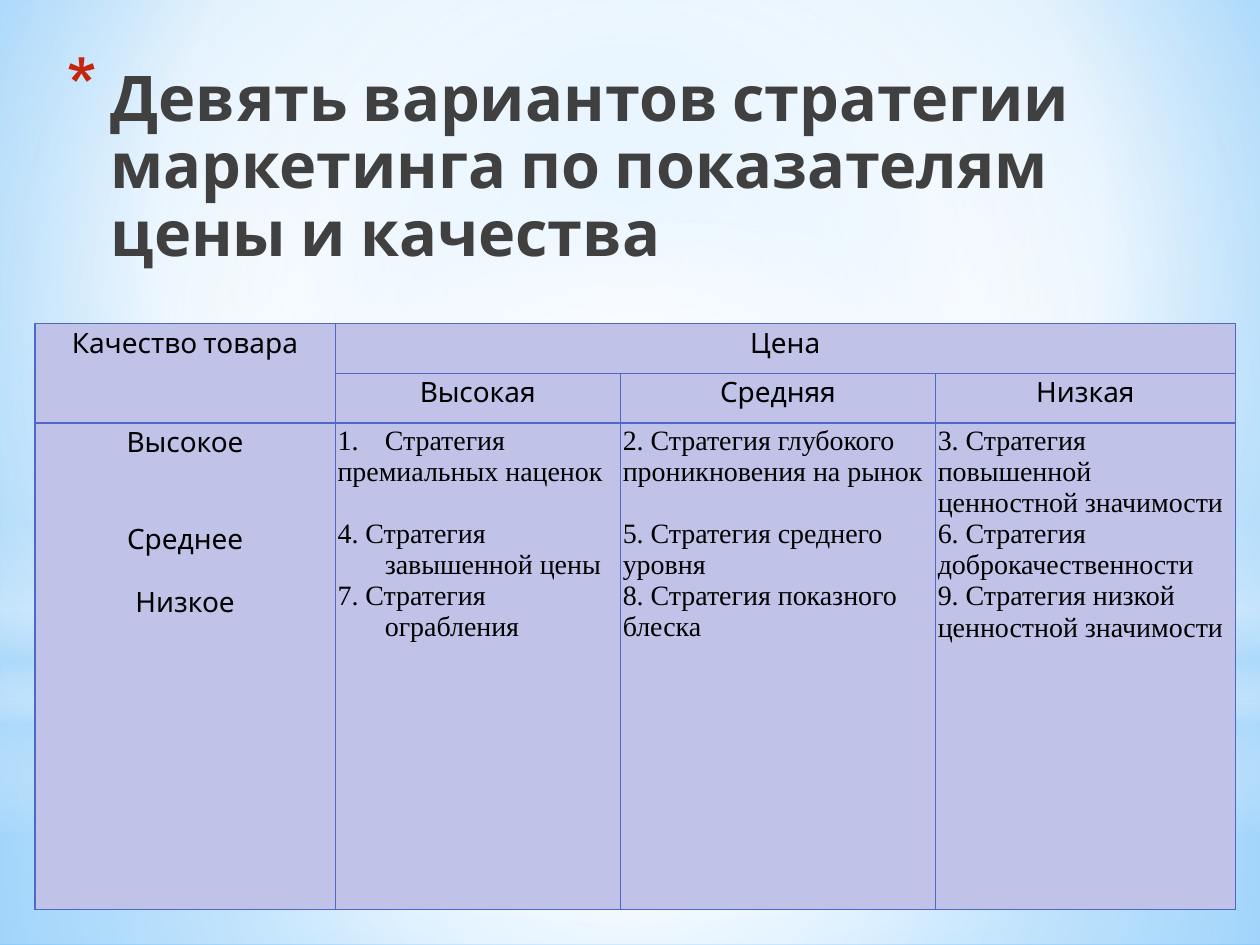
from dataclasses import dataclass

from lxml import etree
from pptx import Presentation
from pptx.dml.color import RGBColor
from pptx.enum.shapes import MSO_SHAPE
from pptx.enum.text import MSO_ANCHOR, PP_ALIGN
from pptx.oxml.ns import qn
from pptx.util import Pt

RECTANGLE, OVAL = MSO_SHAPE.RECTANGLE, MSO_SHAPE.OVAL
LEFT, CENTER = PP_ALIGN.LEFT, PP_ALIGN.CENTER
TOP = MSO_ANCHOR.TOP


@dataclass(frozen=True)
class Theme:
    heading_font: str = "Cabin"
    body_font: str = "Times New Roman"
    title_size: int = 36
    cell_size: int = 16
    title: str = "404040"
    text: str = "000000"
    bullet: str = "C3260C"
    cell: str = "C0C2E8"
    border: str = "4E67C8"
    white: str = "FFFFFF"
    sky: str = "B4DCFA"
    sky_mid: str = "9ED5FF"
    sky_deep: str = "5BB9FF"


THEME = Theme()
WIDTH, HEIGHT = 720, 540
HEADINGS = ["Высокая", "Средняя", "Низкая"]
QUALITIES = [("Высокое", 0), ("Среднее", 36), ("Низкое", 17)]
HANGING = 27
STRATEGIES = [
    [("Стратегия", 0), ("премиальных наценок", 0),
     ("4. Стратегия завышенной цены", 17.7), ("7. Стратегия ограбления", 0)],
    [("2. Стратегия глубокого проникновения на рынок", 0),
     ("5. Стратегия среднего уровня", 17.7), ("8. Стратегия показного блеска", 0)],
    [("3. Стратегия повышенной ценностной значимости", 0),
     ("6. Стратегия доброкачественности", 0),
     ("9. Стратегия низкой ценностной значимости", 0)],
]


def add_color(parent, color, opacity=100):
    node = etree.SubElement(parent, qn("a:srgbClr"), val=color)
    if opacity < 100:
        etree.SubElement(node, qn("a:alpha"), val=str(opacity * 1000))


def set_gradient(fill, element, stops, focus=None):
    fill.gradient()
    gradient = element.find(".//" + qn("a:gradFill"))
    for child in list(gradient):
        gradient.remove(child)
    stop_list = etree.SubElement(gradient, qn("a:gsLst"))
    for position, color, opacity in stops:
        stop = etree.SubElement(stop_list, qn("a:gs"), pos=str(position * 1000))
        add_color(stop, color, opacity)
    if focus:
        circle = etree.SubElement(gradient, qn("a:path"), path="circle")
        sides = {side: str(value * 1000) for side, value in zip("ltrb", focus)}
        etree.SubElement(circle, qn("a:fillToRect"), **sides)
    else:
        etree.SubElement(gradient, qn("a:lin"), ang="5400000", scaled="0")


def add_bullet(paragraph, character=None, color=None, scale=None):
    properties = paragraph._p.get_or_add_pPr()
    if color:
        add_color(etree.SubElement(properties, qn("a:buClr")), color)
    if scale:
        etree.SubElement(properties, qn("a:buSzPct"), val=str(scale * 1000))
    if character:
        etree.SubElement(properties, qn("a:buChar"), char=character)
    else:
        etree.SubElement(properties, qn("a:buAutoNum"), type="arabicPeriod")


def write_text(frame, text, font=THEME.heading_font, size=THEME.cell_size,
               color=THEME.text, bold=False, align=LEFT, before=0, spacing=1.0, hanging=0):
    paragraph = frame.paragraphs[0]
    if paragraph.runs:
        paragraph = frame.add_paragraph()
    paragraph.alignment = align
    paragraph.space_before = Pt(before)
    paragraph.line_spacing = spacing
    if hanging:
        properties = paragraph._p.get_or_add_pPr()
        properties.set("marL", str(Pt(hanging)))
        properties.set("indent", str(-Pt(hanging)))
    run = paragraph.add_run()
    run.text = text
    run.font.name, run.font.size, run.font.bold = font, Pt(size), bold
    run.font.color.rgb = RGBColor.from_string(color)
    return paragraph


def add_backdrop(slide, width, height):
    white, sky = THEME.white, THEME.sky
    set_gradient(slide.background.fill, slide.element,
                 [(0, THEME.sky_mid, 100), (60, white, 100), (100, THEME.sky_deep, 100)],
                 (20, 10, 20, 60))
    center = (50, 50, 50, 50)
    horizon = 402
    layers = [
        (RECTANGLE, horizon, height - horizon,
         [(0, white, 91), (37, white, 76), (100, sky, 79)], center),
        (RECTANGLE, 0, horizon, [(0, white, 89), (48, white, 62), (100, sky, 79)], center),
        (RECTANGLE, 297, 180, [(0, white, 0), (29, white, 30), (45, sky, 40),
                               (55, white, 26), (65, sky, 60), (100, white, 0)], None),
        (OVAL, 126, horizon, [(0, white, 100), (56, white, 0)], center),
    ]
    for kind, top, layer_height, stops, focus in layers:
        shape = slide.shapes.add_shape(kind, 0, Pt(top), Pt(width), Pt(layer_height))
        shape.shadow.inherit = False
        shape.line.fill.background()
        set_gradient(shape.fill, shape.element, stops, focus)


def add_title(slide, left, top, width, height):
    frame = slide.shapes.add_textbox(Pt(left), Pt(top), Pt(width), Pt(height)).text_frame
    frame.word_wrap = True
    frame.vertical_anchor = TOP
    frame.margin_top = Pt(7)
    paragraph = write_text(
        frame, "Девять вариантов стратегии маркетинга по показателям цены и качества",
        size=THEME.title_size, color=THEME.title, bold=True, spacing=0.89, hanging=25.2)
    add_bullet(paragraph, "*", THEME.bullet, 128)


def style_cell(cell):
    cell.margin_left = cell.margin_right = cell.margin_top = cell.margin_bottom = Pt(1.4)
    properties = cell._tc.get_or_add_tcPr()
    for side in ("a:lnL", "a:lnR", "a:lnT", "a:lnB"):
        line = etree.SubElement(properties, qn(side), w=str(Pt(0.75)))
        add_color(etree.SubElement(line, qn("a:solidFill")), THEME.border)
    cell.fill.solid()
    cell.fill.fore_color.rgb = RGBColor.from_string(THEME.cell)


def add_strategy_table(slide, left, top, width, height):
    columns = [171.5, 163, 180]
    columns.append(width - sum(columns))
    rows = [28.4, 28.4]
    rows.append(height - sum(rows))
    table = slide.shapes.add_table(len(rows), len(columns), Pt(left), Pt(top),
                                   Pt(width), Pt(height)).table
    table.first_row = table.horz_banding = False
    for column, column_width in zip(table.columns, columns):
        column.width = Pt(column_width)
    for row, row_height in zip(table.rows, rows):
        row.height = Pt(row_height)
    for cell in table.iter_cells():
        style_cell(cell)
    table.cell(0, 0).merge(table.cell(1, 0))
    table.cell(0, 1).merge(table.cell(0, 3))

    write_text(table.cell(0, 0).text_frame, "Качество товара", align=CENTER)
    write_text(table.cell(0, 1).text_frame, "Цена", align=CENTER)
    for text, before in QUALITIES:
        write_text(table.cell(2, 0).text_frame, text, align=CENTER, before=before)
    for index, (heading, strategies) in enumerate(zip(HEADINGS, STRATEGIES), 1):
        write_text(table.cell(1, index).text_frame, heading, align=CENTER)
        frame = table.cell(2, index).text_frame
        for text, before in strategies:
            write_text(frame, text, font=THEME.body_font, before=before,
                       hanging=HANGING if index == 1 else 0)
    add_bullet(table.cell(2, 1).text_frame.paragraphs[0])


def main():
    presentation = Presentation()
    presentation.slide_width, presentation.slide_height = Pt(WIDTH), Pt(HEIGHT)
    slide = presentation.slides.add_slide(presentation.slide_layouts[6])
    add_backdrop(slide, WIDTH, HEIGHT)
    add_title(slide, 31, 31.7, 674.6, 136)
    add_strategy_table(slide, 20, 185, 686, 334.8)
    presentation.save("out.pptx")


if __name__ == "__main__":
    main()
